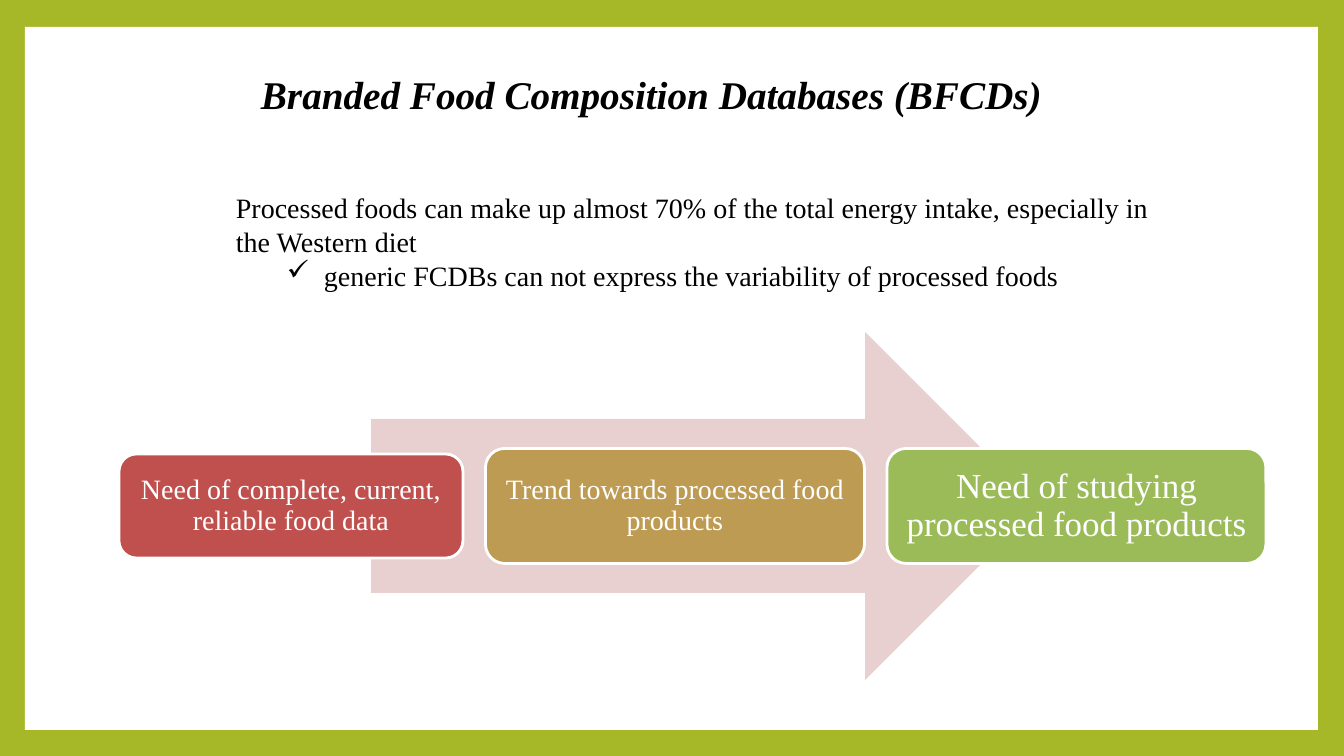
from dataclasses import dataclass

from lxml import etree
from pptx import Presentation, util as u
from pptx.dml.color import RGBColor
from pptx.enum import shapes, text
from pptx.oxml import ns

PX = 12192000 / 1344  # EMU per px


@dataclass(frozen=True)
class Theme:
    font: str = "Times New Roman"
    background: str = "A6B727"
    panel: str = "FFFFFF"
    ink: str = "000000"
    light: str = "FFFFFF"
    arrow: str = "E8D0D0"
    red: str = "C0504D"
    gold: str = "BD9B53"
    green: str = "9BBB59"
    title_size: int = 28
    body_size: int = 20
    conclusion_size: int = 25
    outline: int = 2


THEME = Theme()


def px(length):
    return u.Emu(round(length * PX))


def rgb(value):
    return RGBColor.from_string(value)


def add_run(paragraph, words, size, color, emphasis=False):
    run = paragraph.add_run()
    run.text = words
    font = run.font
    font.name, font.size = THEME.font, u.Pt(size)
    font.color.rgb = rgb(color)
    font.bold = font.italic = emphasis


def add_preset(slide, kind, box, fill, outline=None):
    shape = slide.shapes.add_shape(kind, *map(px, box))
    shape.shadow.inherit = False
    shape.fill.solid()
    shape.fill.fore_color.rgb = rgb(fill)
    if outline:
        shape.line.color.rgb = rgb(outline)
        shape.line.width = u.Pt(THEME.outline)
    else:
        shape.line.fill.background()
    return shape


def add_text_frame(slide, box):
    frame = slide.shapes.add_textbox(*map(px, box)).text_frame
    frame.word_wrap = True
    return frame


def set_bullet(paragraph, symbol, margin, hanging):
    properties = paragraph._p.get_or_add_pPr()
    properties.set("marL", str(px(margin)))
    properties.set("indent", str(-px(hanging)))
    etree.SubElement(properties, ns.qn("a:buChar")).set("char", symbol)


def add_frame(slide, box):
    """Fill the slide with the border colour and lay the white panel on it."""
    fill = slide.background.fill
    fill.solid()
    fill.fore_color.rgb = rgb(THEME.background)
    add_preset(slide, shapes.MSO_SHAPE.RECTANGLE, box, THEME.panel)


def add_title(slide, box, words):
    paragraph = add_text_frame(slide, box).paragraphs[0]
    add_run(paragraph, words, THEME.title_size, THEME.ink, emphasis=True)


def add_body(slide, box, statement, point):
    frame = add_text_frame(slide, box)
    lead, detail = frame.paragraphs[0], frame.add_paragraph()
    detail.level = 1
    set_bullet(detail, "✓", 88, 37)
    for paragraph, words in ((lead, statement), (detail, point)):
        paragraph.alignment = text.PP_ALIGN.JUSTIFY
        add_run(paragraph, words, THEME.body_size, THEME.ink)


def add_step(slide, box, words, fill, size, inset):
    shape = add_preset(slide, shapes.MSO_SHAPE.ROUNDED_RECTANGLE, box, fill, THEME.light)
    frame = shape.text_frame
    frame.word_wrap = True
    frame.vertical_anchor = text.MSO_ANCHOR.MIDDLE
    frame.margin_left = frame.margin_right = px(inset)
    frame.margin_top = frame.margin_bottom = px(inset)
    paragraph = frame.paragraphs[0]
    paragraph.alignment = text.PP_ALIGN.CENTER
    paragraph.line_spacing = 0.9
    add_run(paragraph, words, size, THEME.light)


def add_process(slide, box):
    """Place three steps in a row over a wide arrow."""
    left, top, width, height = box
    arrow_box = (left + 252, top, 668, height)
    add_preset(slide, shapes.MSO_SHAPE.RIGHT_ARROW, arrow_box, THEME.arrow)
    small, large = THEME.body_size, THEME.conclusion_size
    steps = (
        ("Need of complete, current, reliable food data", THEME.red, small, 8, 344, 104),
        ("Trend towards processed food products", THEME.gold, small, 8, 379, 115),
        ("Need of studying processed food products", THEME.green, large, 10, 379, 115),
    )
    gap = (width - sum(step[4] for step in steps)) / (len(steps) - 1)
    for words, fill, size, inset, step_width, step_height in steps:
        step_top = top + (height - step_height) / 2
        step_box = (left, step_top, step_width, step_height)
        add_step(slide, step_box, words, fill, size, inset)
        left += step_width + gap


def main():
    presentation = Presentation()
    presentation.slide_width, presentation.slide_height = px(1344), px(756)
    slide = presentation.slides.add_slide(presentation.slide_layouts[6])
    add_frame(slide, (25, 27, 1293, 703))
    add_title(slide, (251, 65, 909, 57), "Branded Food Composition Databases (BFCDs)")
    add_body(
        slide,
        (226, 186, 933, 142),
        "Processed foods can make up almost 70% of the total energy intake, "
        "especially in the Western diet",
        "generic FCDBs can not express the variability of processed foods",
    )
    add_process(slide, (119, 332, 1147, 348))
    presentation.save("out.pptx")


if __name__ == "__main__":
    main()
